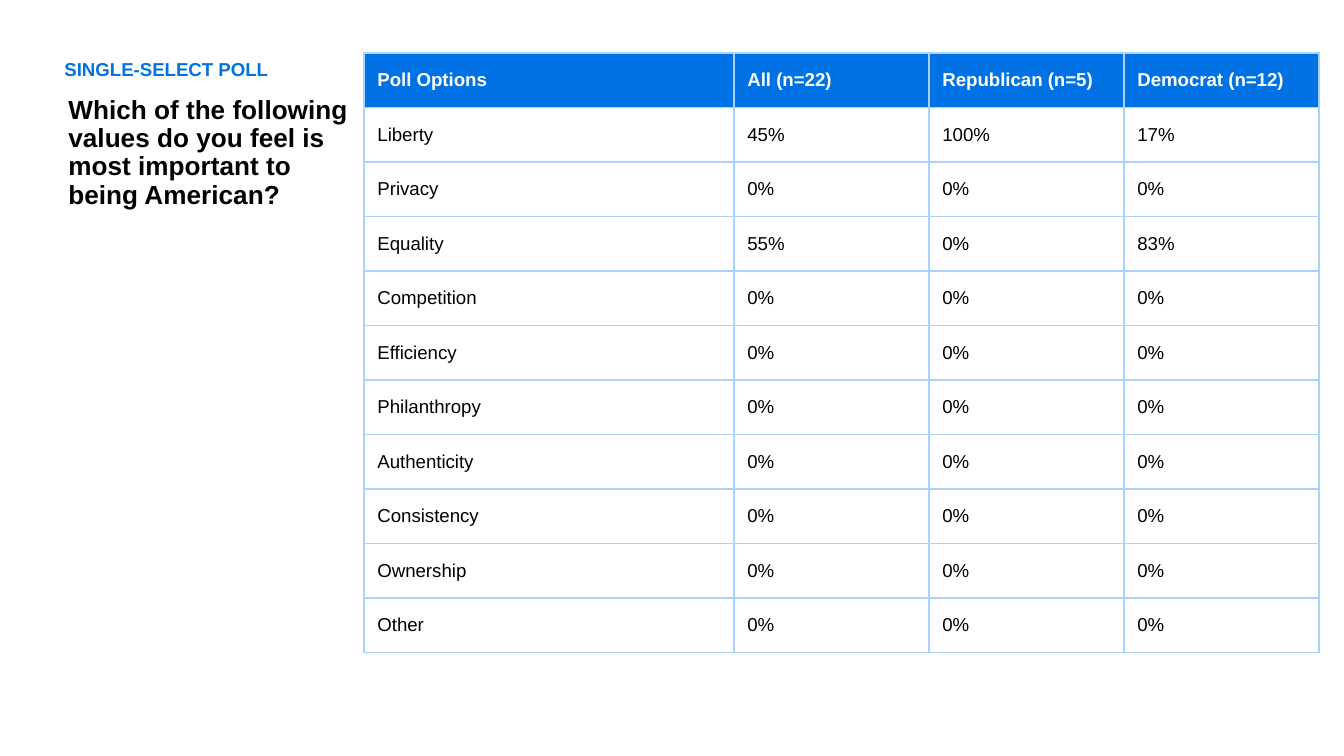
"""Build a slide with the results of a single-select poll by party."""
from dataclasses import dataclass

from lxml import etree
from pptx import Presentation
from pptx.dml.color import RGBColor
from pptx.enum.text import MSO_ANCHOR, MSO_AUTO_SIZE, PP_ALIGN
from pptx.oxml.ns import qn
from pptx.util import Emu, Pt

TOP, MIDDLE = MSO_ANCHOR.TOP, MSO_ANCHOR.MIDDLE
LEFT = PP_ALIGN.LEFT
NO_AUTOFIT = MSO_AUTO_SIZE.NONE
EMU_PER_PX = 914400 / 134.4
TITLE_AND_CONTENT = 1


@dataclass(frozen=True)
class Theme:
    font: str = "Arial"
    ink: str = "000000"
    paper: str = "FFFFFF"
    kicker: str = "0372E3"
    header: str = "0072E3"
    grid: str = "A9D3FF"
    question_size: int = 14
    text_size: int = 10
    space_before: int = 10
    grid_width: float = 0.75
    line_spacing: float = 0.9


def px(length):
    return Emu(round(length * EMU_PER_PX))


class PollSlide:
    def __init__(self, slide, theme):
        self.slide = slide
        self.theme = theme

    def style(self, paragraph, size, color, bold):
        font = paragraph.font
        font.name = self.theme.font
        font.size = Pt(size)
        font.bold = bold
        font.color.rgb = RGBColor.from_string(color)
        paragraph.alignment = LEFT

    def heading(self, placeholder, text, box, size, color):
        placeholder.left, placeholder.top, placeholder.width, placeholder.height = map(px, box)
        frame = placeholder.text_frame
        frame.text = text
        frame.word_wrap = True
        frame.auto_size = NO_AUTOFIT
        frame.vertical_anchor = TOP
        paragraph = frame.paragraphs[0]
        self.style(paragraph, size, color, True)
        paragraph.line_spacing = self.theme.line_spacing
        paragraph.space_before = Pt(self.theme.space_before)
        properties = paragraph.font._element.getparent()
        properties.set("marL", "0")
        properties.set("indent", "0")
        properties.insert_element_before(
            etree.SubElement(properties, qn("a:buNone")), "a:defRPr")

    def borders(self, cell):
        properties = cell._tc.get_or_add_tcPr()
        for side in ("lnL", "lnR", "lnT", "lnB"):
            line = etree.SubElement(properties, qn(f"a:{side}"), w=str(Pt(self.theme.grid_width)))
            fill = etree.SubElement(line, qn("a:solidFill"))
            etree.SubElement(fill, qn("a:srgbClr"), val=self.theme.grid)

    def cell(self, cell, text, fill, color, bold):
        cell.text = text
        cell.vertical_anchor = MIDDLE
        self.style(cell.text_frame.paragraphs[0], self.theme.text_size, color, bold)
        self.borders(cell)
        cell.fill.solid()
        cell.fill.fore_color.rgb = RGBColor.from_string(fill)

    def table(self, rows, left, top, column_widths, height):
        table = self.slide.shapes.add_table(
            len(rows), len(column_widths), px(left), px(top),
            px(sum(column_widths)), px(height)).table
        for column, width in zip(table.columns, column_widths):
            column.width = px(width)
        for index, (row, values) in enumerate(zip(table.rows, rows)):
            row.height = px(height / len(rows))
            is_header = index == 0
            fill = self.theme.header if is_header else self.theme.paper
            color = self.theme.paper if is_header else self.theme.ink
            for cell, value in zip(row.cells, values):
                self.cell(cell, value, fill, color, is_header)


def main():
    theme = Theme()
    presentation = Presentation()
    presentation.slide_width, presentation.slide_height = px(1344), px(756)
    slide = presentation.slides.add_slide(presentation.slide_layouts[TITLE_AND_CONTENT])
    poll = PollSlide(slide, theme)

    poll.heading(slide.shapes.title,
                 "Which of the following values do you feel is most important to being American?",
                 (55, 90, 309, 593), theme.question_size, theme.ink)
    poll.heading(slide.placeholders[1], "SINGLE-SELECT POLL",
                 (51, 54, 312, 38), theme.text_size, theme.kicker)

    options = ("Liberty", "Privacy", "Equality", "Competition", "Efficiency", "Philanthropy",
               "Authenticity", "Consistency", "Ownership", "Other")
    shares = {"Liberty": (45, 100, 17), "Equality": (55, 0, 83)}
    results = [("Poll Options", "All (n=22)", "Republican (n=5)", "Democrat (n=12)")]
    for option in options:
        results.append((option, *(f"{share}%" for share in shares.get(option, (0, 0, 0)))))
    poll.table(results, 364, 53, (370, 195, 195, 195), 600)

    presentation.save("out.pptx")


if __name__ == "__main__":
    main()
